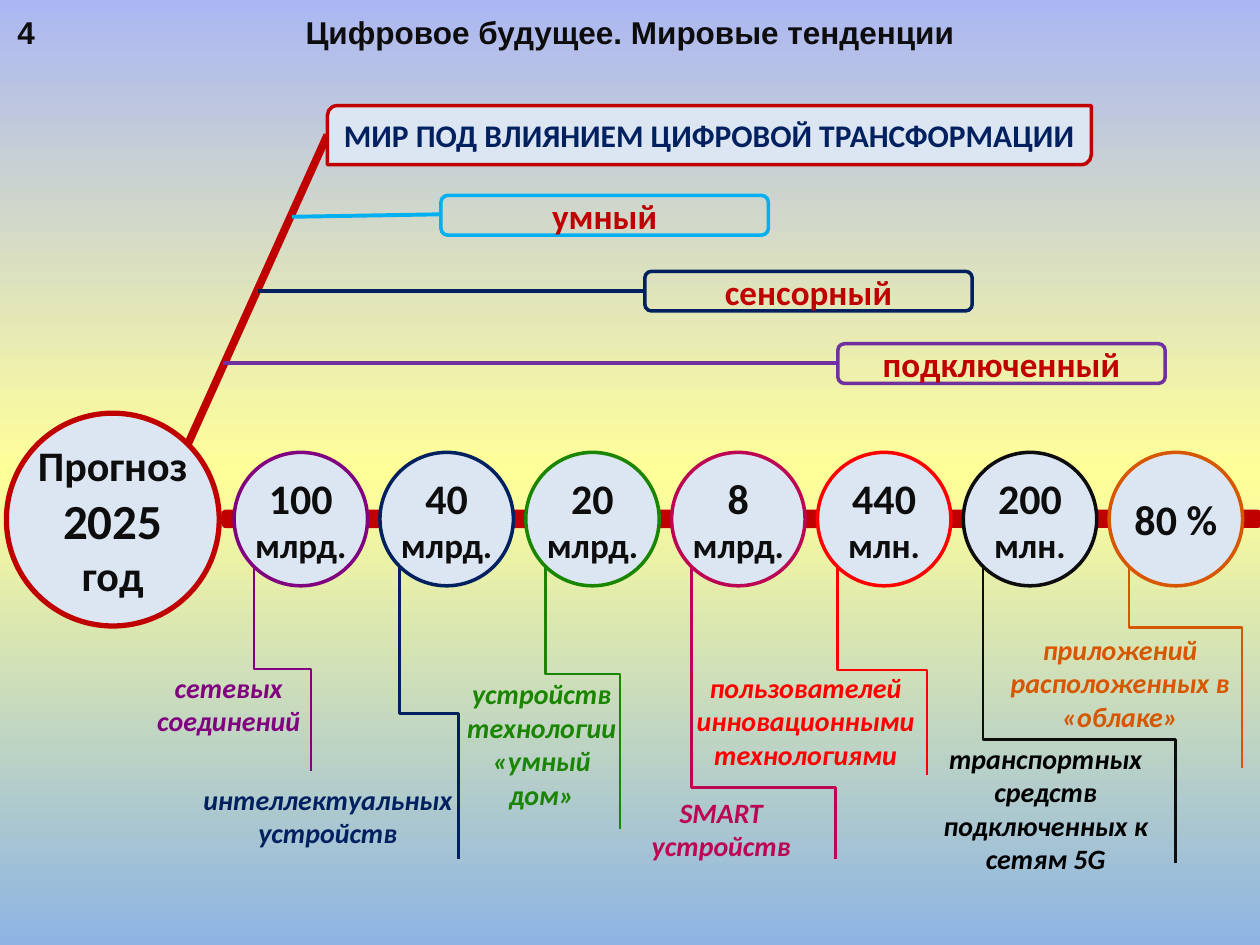
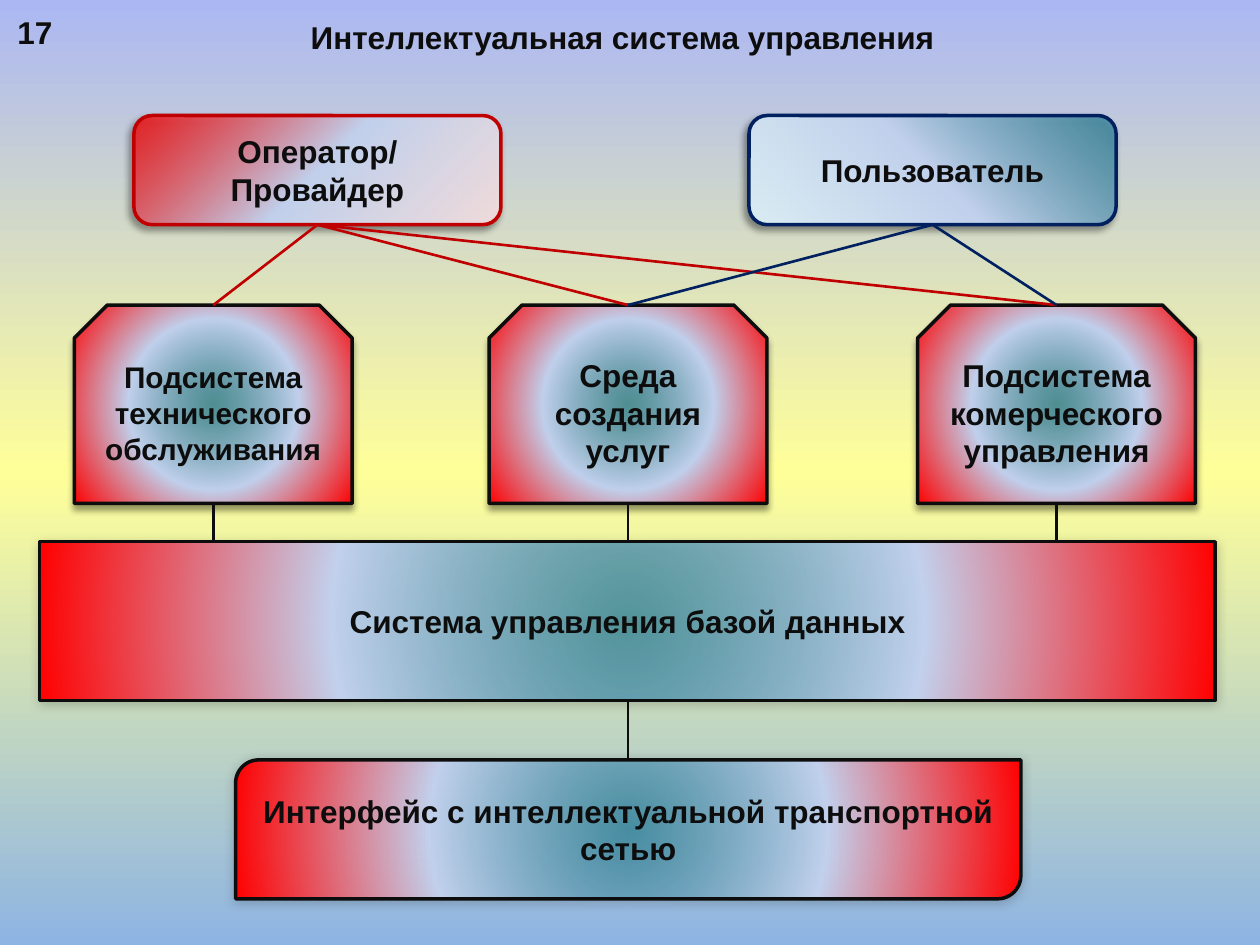
from pptx import Presentation
from pptx.dml.color import RGBColor
from pptx.enum.shapes import MSO_CONNECTOR, MSO_SHAPE
from pptx.enum.text import MSO_ANCHOR, MSO_AUTO_SIZE, PP_ALIGN
from pptx.oxml import parse_xml
from pptx.oxml.ns import nsdecls
from pptx.util import Cm, Pt

ELBOW, STRAIGHT = MSO_CONNECTOR.ELBOW, MSO_CONNECTOR.STRAIGHT
OVAL, NODE = MSO_SHAPE.OVAL, MSO_SHAPE.FLOWCHART_CONNECTOR
RECT, ROUND = MSO_SHAPE.RECTANGLE, MSO_SHAPE.ROUNDED_RECTANGLE
DIAG, SNIP = MSO_SHAPE.ROUND_2_DIAG_RECTANGLE, MSO_SHAPE.SNIP_2_SAME_RECTANGLE
LEFT, CENTER = PP_ALIGN.LEFT, PP_ALIGN.CENTER
TITLE, TEXTBOX = "title", "textbox"


class Theme:
    ink, pale, red, navy = "0D0D0D", "DCE6F2", "C00000", "002060"
    sky, violet, purple, green = "00B0F0", "7030A0", "800080", "1A8501"
    crimson, bright, orange, black = "BC0654", "FF0000", "D65700", "000000"
    head, body = "Arial", "Calibri"
    label, small, base, pill, value, year = 16, 17, 18, 20, 24, 28
    radial = ('<a:path path="circle"><a:fillToRect l="50000" t="50000" '
              'r="50000" b="50000"/></a:path>')
    # Gradients: start, middle and end colour, start opacity, direction
    page = ("8EB4E3", "FFFF99", "ABB7F3", 100, '<a:lin ang="16200000" scaled="0"/>')
    operator = ("FF0000", "C2D1ED", "F2DCDB", 75, '<a:lin ang="2700000" scaled="0"/>')
    user = ("31859C", "C2D1ED", "DBEEF4", 75, '<a:lin ang="8100000" scaled="0"/>')
    system = ("31859C", "C2D1ED", "FF0000", 75, radial)
    # Shadows: opacity %, blur pt, distance pt, angle
    side_shadow, drop_shadow, soft_shadow = (40, 4, 3, 135), (40, 4, 3, 90), (20, 6, 1, 135)
    gradient = ('<a:gradFill %s rotWithShape="1"><a:gsLst>'
                '<a:gs pos="0"><a:srgbClr val="{0}"><a:alpha val="{3}000"/></a:srgbClr></a:gs>'
                '<a:gs pos="50000"><a:srgbClr val="{1}"/></a:gs>'
                '<a:gs pos="100000"><a:srgbClr val="{2}"/></a:gs>'
                '</a:gsLst>{4}</a:gradFill>' % nsdecls("a"))


def box(s, kind, at, text="", size=Theme.base, color=Theme.ink, font=Theme.body, fill=None,
        line=None, width=2, inset=None, align=CENTER, italic=False, tail=(), shadow=None):
    """Place one shape, text box or title and format its text."""
    at = [Cm(v) for v in at]
    if kind == TITLE:
        sp = s.shapes.title
        sp.left, sp.top, sp.width, sp.height = at
    elif kind == TEXTBOX:
        sp = s.shapes.add_textbox(*at)
    else:
        sp = s.shapes.add_shape(kind, *at)
        sp.shadow.inherit = False
        sp.line.color.rgb = RGBColor.from_string(line)
        sp.line.width = Pt(width)
        if fill is None:
            sp.fill.background()
        else:
            sp.fill.solid()
            if isinstance(fill, tuple):
                solid = sp.element.spPr.xpath("a:solidFill")[0]
                sp.element.spPr.replace(solid, parse_xml(Theme.gradient.format(*fill)))
            else:
                sp.fill.fore_color.rgb = RGBColor.from_string(fill)
    if shadow:
        alpha, blur, dist, angle = shadow
        sp.element.spPr.xpath("a:effectLst")[0].append(parse_xml(
            f'<a:outerShdw {nsdecls("a")} blurRad="{Pt(blur)}" dist="{Pt(dist)}" '
            f'dir="{angle * 60000}" algn="ctr" rotWithShape="0"><a:srgbClr val="{Theme.black}">'
            f'<a:alpha val="{alpha * 1000}"/></a:srgbClr></a:outerShdw>'))
    tf = sp.text_frame
    tf.text = text
    for part, _ in tail:
        tf.paragraphs[0].add_run().text = part
    tf.word_wrap = True
    tf.auto_size = MSO_AUTO_SIZE.NONE
    tf.vertical_anchor = MSO_ANCHOR.TOP if kind == TEXTBOX else MSO_ANCHOR.MIDDLE
    if inset is not None:
        tf.margin_left = tf.margin_right = tf.margin_top = tf.margin_bottom = Cm(inset)
    for p in tf.paragraphs:
        p.alignment = align
        for r in p.runs:
            r.font.name, r.font.bold, r.font.italic = font, True, italic
            r.font.size = Pt(dict(tail).get(r.text, size))
            r.font.color.rgb = RGBColor.from_string(color)


def link(s, x1, y1, x2, y2, color, width=1.5, turn=None):
    """Draw a straight line, or a down-right-down elbow that turns at height turn."""
    if turn is None:
        c = s.shapes.add_connector(STRAIGHT, Cm(x1), Cm(y1), Cm(x2), Cm(y2))
    else:
        dx, dy = x2 - x1, y2 - y1
        left, top = (x1 + x2 - dy) / 2, (y1 + y2 - dx) / 2
        c = s.shapes.add_connector(ELBOW, Cm(left), Cm(top), Cm(left + dy), Cm(top + dx))
        spPr = c.element.spPr
        spPr.xfrm.set("rot", "16200000")
        spPr.xfrm.set("flipH", "1")
        geom = spPr.xpath("a:prstGeom")[0]
        for av in geom.xpath("a:avLst"):
            geom.remove(av)
        geom.append(parse_xml(f'<a:avLst {nsdecls("a")}><a:gd name="adj1" '
                              f'fmla="val {round((turn - y1) / dy * 100000)}"/></a:avLst>'))
    c.line.color.rgb = RGBColor.from_string(color)
    c.line.width = Pt(width)
    c.element.spPr.append(parse_xml(f'<a:effectLst {nsdecls("a")}/>'))


prs = Presentation()
prs.slide_width, prs.slide_height = Cm(25.4), Cm(19.05)

# Shared background
master = prs.slide_master
master.background.fill.solid()
bg = master.element.xpath(".//p:bgPr")[0]
bg.replace(bg[0], parse_xml(Theme.gradient.format(*Theme.page)))

# Titles and slide numbers
slides = []
for number, title, top, width in [
        ("4", "Цифровое будущее. Мировые тенденции", 0.13, 25.4),
        ("17", "Интеллектуальная система управления", 0.23, 25.1)]:
    s = prs.slides.add_slide(prs.slide_layouts[5])
    box(s, TITLE, (0, top, width, 1.03), title, font=Theme.head)
    box(s, TEXTBOX, (0.1, 0.13, 1.4, 1.03), number, font=Theme.head, align=LEFT)
    slides.append(s)
trends, control = slides

# Slide 1: forecast circle and timeline bar
box(trends, OVAL, (0.13, 8.33, 4.29, 4.29), "Прогноз ", Theme.value, fill=Theme.pale,
    line=Theme.red, width=3, inset=0, tail=[("2025", Theme.year), (" год", Theme.value)])
box(trends, ROUND, (4.5, 10.31, 20.9, 0.3), fill=Theme.red, line=Theme.red)

# Slide 1: forecast values, each with an elbow (end x, end y, turn y) and a label
forecasts = [
    ("100", " млрд.", Theme.purple, (6.27, 15.54, 13.49),
     "сетевых соединений", (2.92, 13.51, 3.38, 1.37)),
    ("40", " млрд.", Theme.navy, (9.25, 17.32, 14.38),
     "интеллектуальных устройств", (4.08, 15.77, 5.06, 1.37)),
    ("20", " млрд.", Theme.green, (12.5, 16.71, 13.59),
     "устройств технологии «умный дом»", (9.32, 13.64, 3.2, 2.74)),
    ("8", " млрд.", Theme.crimson, (16.84, 17.32, 15.88),
     "SMART устройств", (12.57, 16.03, 3.94, 1.37)),
    ("440", " млн.", Theme.bright, (18.69, 15.62, 13.51),
     "пользователей инновационными технологиями", (13.94, 13.51, 4.6, 2.06)),
    ("200", " млн.", Theme.ink, (23.7, 17.4, 14.91),
     "транспортных средств подключенных к сетям 5G", (18.69, 14.94, 4.78, 2.74)),
    ("80 %", "", Theme.orange, (25.04, 15.49, 12.65),
     "приложений расположенных в «облаке»", (20.19, 12.75, 4.78, 2.06)),
]
for i, (value, unit, color, (x2, y2, turn), label, at) in enumerate(forecasts):
    x = 4.72 + 2.94 * i
    box(trends, NODE, (x, 9.12, 2.69, 2.69), value, Theme.value, fill=Theme.pale, line=color,
        inset=0, tail=[(unit, Theme.pill)] if unit else ())
    link(trends, x + 0.4, 11.43, x2, y2, color, turn=turn)
    box(trends, TEXTBOX, at, label, Theme.label, inset=0, italic=True,
        color=Theme.black if color == Theme.ink else color)

# Slide 1: headline with its three branches
link(trends, 3.78, 8.97, 6.6, 2.72, Theme.red, 4.5)
box(trends, DIAG, (6.6, 2.13, 15.4, 1.19), "МИР ПОД ВЛИЯНИЕМ ЦИФРОВОЙ ТРАНСФОРМАЦИИ",
    color=Theme.navy, fill=Theme.pale, line=Theme.red, inset=0.2)
for text, color, x, y, start, start_y in [
        ("умный", Theme.sky, 8.89, 3.94, 5.89, 4.37),
        ("сенсорный", Theme.navy, 13, 5.47, 5.21, 5.87),
        ("подключенный", Theme.violet, 16.89, 6.93, 4.5, 7.32)]:
    link(trends, start, start_y, x, 4.32 if y < 5 else start_y, color, 2.25)
    box(trends, ROUND, (x, y, 6.6, 0.8), text, Theme.pill, Theme.red, line=color)

# Slide 2: actors
for text, x, fill, color in [
        ("Оператор/\nПровайдер", 2.7, Theme.operator, Theme.red),
        ("Пользователь", 15.1, Theme.user, Theme.navy)]:
    box(control, ROUND, (x, 2.33, 7.4, 2.2), text, font=Theme.head, fill=fill, line=color,
        shadow=Theme.side_shadow)

# Slide 2: subsystems
subsystems = [
    ("Подсистема технического обслуживания", 1.5, Theme.small),
    ("Среда создания услуг", 9.86, Theme.base),
    ("Подсистема комерческого\vуправления", 18.5, Theme.base),
]
for text, x, size in subsystems:
    box(control, SNIP, (x, 6.15, 5.6, 4), text, size, font=Theme.head, fill=Theme.system,
        line=Theme.ink, shadow=Theme.drop_shadow)

# Slide 2: database and network interface
for kind, at, text in [
        (RECT, (0.8, 10.92, 23.7, 3.2), "Система управления базой данных"),
        (DIAG, (4.75, 15.32, 15.83, 2.8), "Интерфейс с интеллектуальной транспортной сетью")]:
    box(control, kind, at, text, font=Theme.head, fill=Theme.system, line=Theme.ink,
        shadow=Theme.soft_shadow)

# Slide 2: links between the levels
centers = [x + 2.8 for _, x, _ in subsystems]
for actor_x, color, targets in [(6.4, Theme.red, centers), (18.8, Theme.navy, centers[1:])]:
    for x in targets:
        link(control, actor_x, 4.53, x, 6.15, color)
for x in centers:
    link(control, x, 10.15, x, 10.92, Theme.ink)
link(control, centers[1], 14.12, centers[1], 15.32, Theme.ink)

prs.save("out.pptx")
